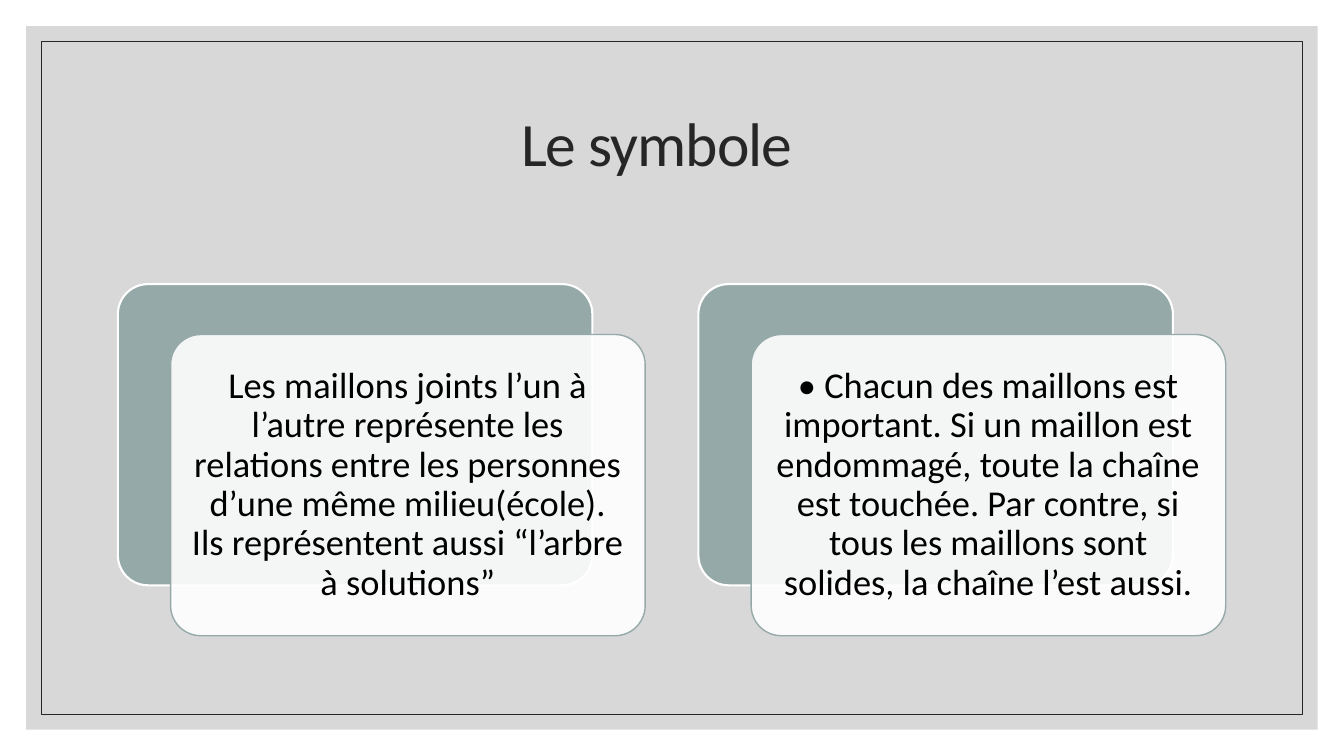
from lxml import etree
from pptx import Presentation
from pptx.dml.color import RGBColor
from pptx.enum.shapes import MSO_SHAPE
from pptx.enum.text import MSO_ANCHOR, MSO_AUTO_SIZE, PP_ALIGN
from pptx.oxml.ns import qn
from pptx.util import Cm, Pt

RECTANGLE = MSO_SHAPE.RECTANGLE
ROUNDED = MSO_SHAPE.ROUNDED_RECTANGLE
MIDDLE = MSO_ANCHOR.MIDDLE
NO_AUTOFIT = MSO_AUTO_SIZE.NONE
CENTER = PP_ALIGN.CENTER

COLORS = {
    "white": "FFFFFF",
    "black": "000000",
    "ink": "262626",
    "gray": "BFBFBF",
    "sage": "96A9A9",
}
SLIDE_WIDTH, SLIDE_HEIGHT = 33.87, 19.05
CARD_LEFT, CARD_TOP = 2.97, 7.16
CARD_WIDTH, CARD_HEIGHT = 11.96, 7.59
CARD_PITCH = 14.63
SHIFT_X, SHIFT_Y = 1.33, 1.27

MESSAGES = [
    "Les maillons joints l’un à l’autre représente les relations entre les "
    "personnes d’une même milieu(école). Ils représentent aussi “l’arbre à solutions”",
    "• Chacun des maillons est important. Si un maillon est endommagé, toute la "
    "chaîne est touchée. Par contre, si tous les maillons sont solides, la chaîne "
    "l’est aussi.",
]


def color(name):
    return RGBColor.from_string(COLORS[name])


def write_text(frame, text, size, ink, inset, spacing=None):
    frame.word_wrap = True
    frame.auto_size = NO_AUTOFIT
    frame.vertical_anchor = MIDDLE
    frame.margin_left = frame.margin_right = Cm(inset)
    frame.margin_top = frame.margin_bottom = Cm(inset)
    paragraph = frame.paragraphs[0]
    paragraph.alignment = CENTER
    paragraph.line_spacing = 0.9
    run = paragraph.add_run()
    run.text = text
    run.font.name = "Calibri"
    run.font.size = Pt(size)
    run.font.color.rgb = color(ink)
    if spacing is not None:
        run.font._element.set("spc", str(spacing))


class SymbolSlide:
    def __init__(self, presentation):
        self.slide = presentation.slides.add_slide(presentation.slide_layouts[5])

    def panel(self, kind, left, top, width, height, fill=None, opacity=100,
              line=None, weight=1):
        panel = self.slide.shapes.add_shape(
            kind, Cm(left), Cm(top), Cm(width), Cm(height))
        panel.shadow.inherit = False
        if kind == ROUNDED:
            panel.adjustments[0] = 0.1
        if fill:
            panel.fill.solid()
            panel.fill.fore_color.rgb = color(fill)
            if opacity < 100:
                tint = panel._element.spPr.find(qn("a:solidFill"))[0]
                etree.SubElement(tint, qn("a:alpha"), val=str(opacity * 1000))
        else:
            panel.fill.background()
        if line:
            panel.line.color.rgb = color(line)
            panel.line.width = Pt(weight)
        else:
            panel.line.fill.background()
        return panel

    def border(self, margin, **style):
        self.panel(RECTANGLE, margin, margin, SLIDE_WIDTH - 2 * margin,
                   SLIDE_HEIGHT - 2 * margin, **style)

    def title(self, text):
        title = self.slide.shapes.title
        title.left, title.top = Cm(2.97), Cm(1.78)
        title.width, title.height = Cm(27.94), Cm(3.81)
        write_text(title.text_frame, text, size=44, ink="ink", inset=0.2, spacing=-70)
        self.slide.shapes._spTree.append(title._element)

    def card(self, left, text):
        self.panel(ROUNDED, left, CARD_TOP, CARD_WIDTH, CARD_HEIGHT,
                   fill="sage", line="white", weight=1.5)
        front = self.panel(ROUNDED, left + SHIFT_X, CARD_TOP + SHIFT_Y,
                           CARD_WIDTH, CARD_HEIGHT, fill="white", opacity=90,
                           line="sage")
        write_text(front.text_frame, text, size=26, ink="black", inset=0.28)


def main():
    presentation = Presentation()
    presentation.slide_width = Cm(SLIDE_WIDTH)
    presentation.slide_height = Cm(SLIDE_HEIGHT)
    symbol = SymbolSlide(presentation)
    symbol.border(0.66, fill="gray", opacity=60)
    symbol.border(1.04, line="ink", weight=0.5)
    symbol.title("Le symbole\t")
    for index, message in enumerate(MESSAGES):
        symbol.card(CARD_LEFT + index * CARD_PITCH, message)
    presentation.save("out.pptx")


if __name__ == "__main__":
    main()
